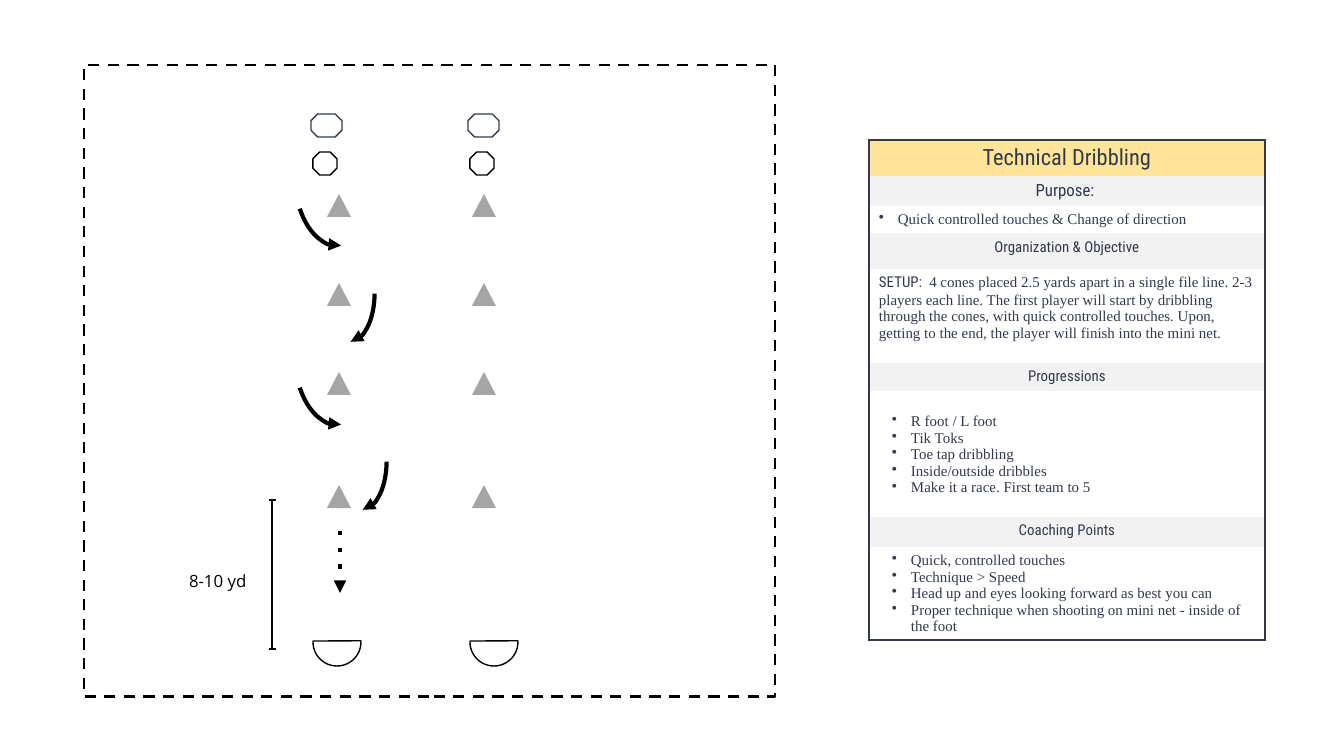
from lxml.etree import SubElement
from pptx import Presentation
from pptx.dml.color import RGBColor
from pptx.enum.shapes import MSO_CONNECTOR, MSO_SHAPE
from pptx.enum.text import PP_ALIGN
from pptx.oxml.ns import qn
from pptx.util import Pt

RECT = MSO_SHAPE.RECTANGLE
CONE = MSO_SHAPE.ISOSCELES_TRIANGLE
OCTAGON = MSO_SHAPE.OCTAGON
ARC = MSO_SHAPE.ARC
CHORD = MSO_SHAPE.CHORD
STRAIGHT = MSO_CONNECTOR.STRAIGHT
LEFT, CENTER = PP_ALIGN.LEFT, PP_ALIGN.CENTER

SCALE = 914400 / 134.4
COLORS = {
    "black": "000000",
    "white": "FFFFFF",
    "cone": "A5A5A5",
    "edge": "31394D",
    "ink": "32394D",
    "gold": "FFE599",
    "band": "F2F2F2",
}
HEAD, BODY, LABEL = "Roboto Condensed", "Times New Roman", "Open Sans"


def emu(px):
    """Turn px into EMU."""
    return round(px * SCALE)


def tint(name):
    """Look up a colour by name."""
    return RGBColor.from_string(COLORS[name])


class Board:
    """Holds the style and the current slide."""

    def __init__(self, slide):
        self.slide = slide

    def stroke(self, item, color, width, dash=None, arrow=False):
        """Style an outline or a connector."""
        item.line.color.rgb = tint(color)
        item.line.width = Pt(width)
        ln = item.element.spPr.find(qn("a:ln"))
        if dash:
            SubElement(ln, qn("a:prstDash"), val=dash)
        if arrow:
            SubElement(ln, qn("a:tailEnd"), type="triangle")

    def shape(self, kind, box, fill=None, line=None, turn=0, flip=False, adjust=()):
        """Add a preset shape."""
        item = self.slide.shapes.add_shape(kind, *map(emu, box))
        item.rotation = turn
        for i, value in enumerate(adjust):
            item.adjustments[i] = value
        if flip:
            item.element.spPr.find(qn("a:xfrm")).set("flipH", "1")
        if fill:
            item.fill.solid()
            item.fill.fore_color.rgb = tint(fill)
        else:
            item.fill.background()
        if line:
            self.stroke(item, **line)
        else:
            item.line.fill.background()
        item.shadow.inherit = False

    def link(self, ends, **line):
        """Add a straight line."""
        item = self.slide.shapes.add_connector(STRAIGHT, *map(emu, ends))
        self.stroke(item, **line)
        SubElement(item.element.spPr, qn("a:effectLst"))

    def say(self, para, runs, size, color="ink", align=LEFT, indent=0):
        """Fill a paragraph with (text, font) runs, bulleted if indented."""
        if indent:
            pr = para._p.get_or_add_pPr()
            pr.set("marL", str(emu(indent)))
            pr.set("indent", str(-emu(19)))
            SubElement(SubElement(pr, qn("a:buClr")), qn("a:srgbClr"), val=COLORS[color])
            SubElement(pr, qn("a:buChar"), char="•")
        para.alignment = align
        for text, face in runs:
            run = para.add_run()
            run.text = text
            for key, value in {"name": face, "size": Pt(size)}.items():
                setattr(run.font, key, value)
            run.font.color.rgb = tint(color)

    def label(self, text, box):
        """Add a small text box."""
        frame = self.slide.shapes.add_textbox(*map(emu, box)).text_frame
        frame.word_wrap = True
        for side in ("left", "top", "right", "bottom"):
            setattr(frame, f"margin_{side}", 0)
        self.say(frame.paragraphs[0], [(text, LABEL)], 9, "black")

    def cell(self, cell, fill, lines, edges, top=5, **style):
        """Fill and frame one table cell."""
        margins = {"left": 10, "top": top, "right": 10, "bottom": 5}
        for side, gap in margins.items():
            setattr(cell, f"margin_{side}", emu(gap))
        pr = cell._tc.get_or_add_tcPr()
        for side in "LRTB":
            ln = SubElement(pr, qn(f"a:ln{side}"), w=str(Pt(0.75)))
            if side in edges:
                paint = SubElement(ln, qn("a:solidFill"))
                SubElement(paint, qn("a:srgbClr"), val=COLORS["edge"])
            else:
                SubElement(ln, qn("a:noFill"))
        cell.fill.solid()
        cell.fill.fore_color.rgb = tint(fill)
        frame = cell.text_frame
        for i, runs in enumerate(lines):
            para = frame.add_paragraph() if i else frame.paragraphs[0]
            self.say(para, runs, **style)

    def table(self, box, rows):
        """Add a one-column table of (height, cell format) rows."""
        grid = self.slide.shapes.add_table(len(rows), 1, *map(emu, box)).table
        grid.first_row = grid.horz_banding = False
        for i, (height, form) in enumerate(rows):
            grid.rows[i].height = emu(height)
            edges = "LR" + "T" * (i == 0) + "B" * (i == len(rows) - 1)
            self.cell(grid.cell(i, 0), edges=edges, **form)


def head(text, size=8, fill="band"):
    """Format a heading cell."""
    return {"fill": fill, "lines": [[(text, HEAD)]], "size": size, "align": CENTER}


def body(*lines, **extra):
    """Format a body cell."""
    return {"fill": "white", "lines": [[(t, BODY)] for t in lines], "size": 8, **extra}


def main():
    """Build the drill slide."""
    deck = Presentation()
    deck.slide_width, deck.slide_height = emu(1344), emu(756)
    board = Board(deck.slides.add_slide(deck.slide_layouts[6]))

    thin = {"color": "black", "width": 0.75}
    bold = {"color": "black", "width": 2.25, "arrow": True}
    board.shape(RECT, (84, 65, 691, 632), line={"color": "black", "width": 1.5, "dash": "dash"})

    setup = [
        ("SETUP:  ", HEAD),
        ("4 cones placed 2.5 yards apart in a single file line. 2-3 players each line. "
         "The first player will start by dribbling through the cones, with quick "
         "controlled touches. Upon, getting to the end, the player will finish into "
         "the mini net.", BODY),
    ]
    rows = [
        (36, head("Technical Dribbling", 12, "gold")),
        (30, head("Purpose: ", 9)),
        (27, body("Quick controlled touches & Change of direction", indent=19)),
        (36, head("Organization & Objective")),
        (94, {"fill": "white", "lines": [setup], "size": 8}),
        (28, head("Progressions")),
        (126, body("R foot / L foot", "Tik Toks", "Toe tap dribbling",
                   "Inside/outside dribbles", "Make it a race. First team to 5",
                   indent=32, top=22)),
        (30, head("Coaching Points")),
        (93, body("Quick, controlled touches", "Technique > Speed",
                  "Head up and eyes looking forward as best you can",
                  "Proper technique when shooting on mini net - inside of the foot",
                  indent=32)),
    ]
    board.table((869, 140, 396, 500), rows)

    for x in (327, 472):
        for y in (194, 283, 372, 485):
            board.shape(CONE, (x, y, 24, 23), "cone")
    for x in (311, 468):
        board.shape(OCTAGON, (x + 2, 152, 24, 23), "white", thin)
        board.shape(OCTAGON, (x, 114, 31, 23), "white", {"color": "edge", "width": 0.75})
        board.shape(CHORD, (x + 2, 618, 48, 48), "white", thin, 270, adjust=(52.2, 163.41))
    for x, y in ((269, 239), (281, 407)):
        board.shape(ARC, (x, y, 138, 70), line=bold, turn=79.4, adjust=(185.31, 0))
    for y in (157, 336):
        board.shape(ARC, (276, y, 110, 69), line=bold, turn=259.4, flip=True,
                    adjust=(172.98, 0))

    board.link((340, 531, 340, 593), dash="dot", **bold)
    board.link((272, 500, 272, 649), **thin)
    for y in (500, 649):
        board.link((269, y, 276, y), **thin)
    board.label("8-10 yd", (189, 571, 86, 20))
    deck.save("out.pptx")


if __name__ == "__main__":
    main()
